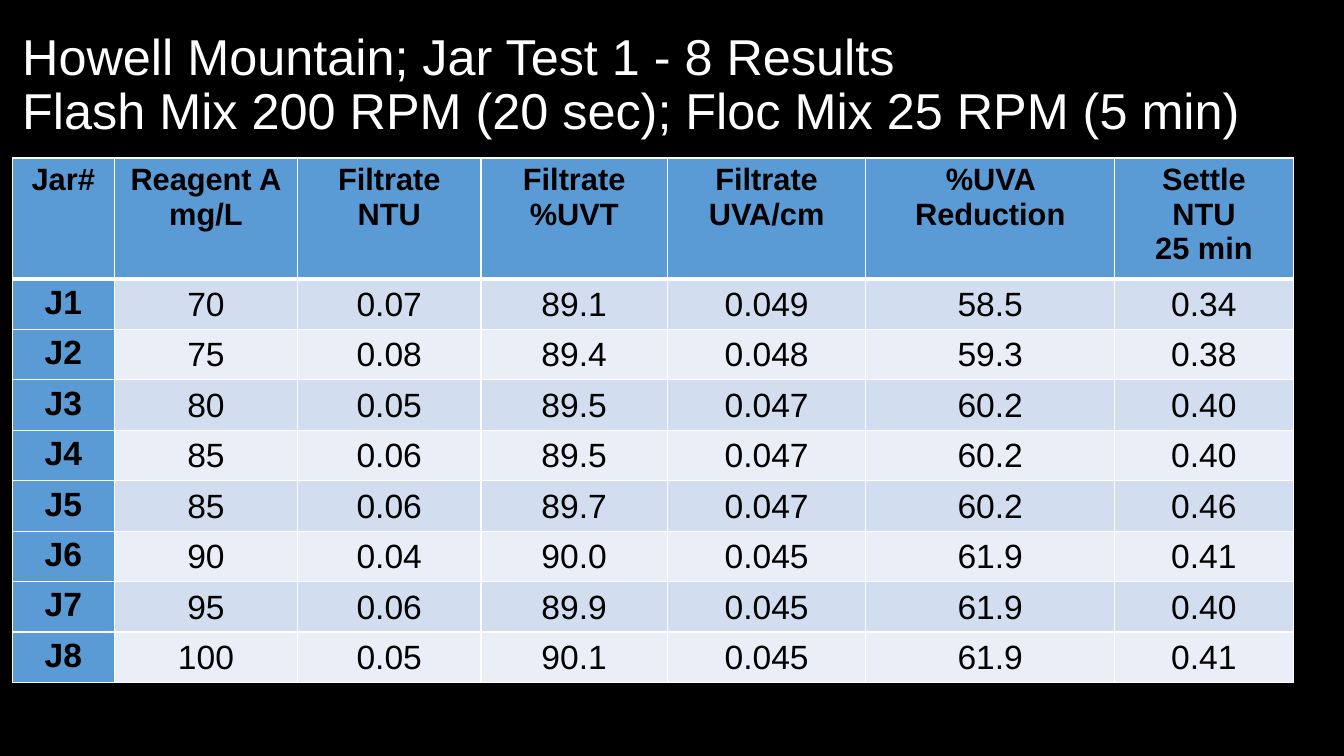
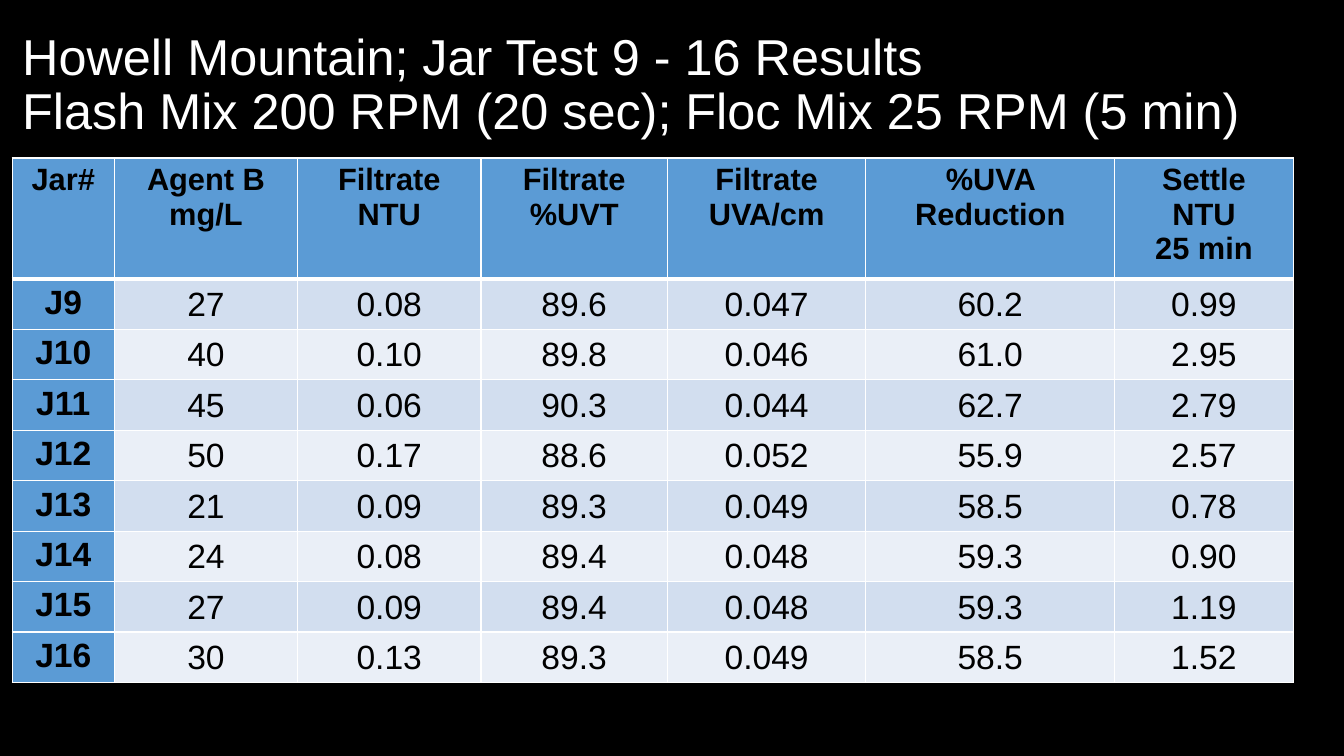
"""Builds two slides of jar test results, one table each."""
from lxml import etree
from pptx import Presentation
from pptx.dml.color import RGBColor
from pptx.enum.text import MSO_ANCHOR, PP_ALIGN
from pptx.oxml.ns import qn
from pptx.util import Cm, Pt

LEFT, CENTER = PP_ALIGN.LEFT, PP_ALIGN.CENTER
TOP, MIDDLE = MSO_ANCHOR.TOP, MSO_ANCHOR.MIDDLE

FONT = "Arial"
BLACK, WHITE, BLUE = "000000", "FFFFFF", "5B9BD5"
BANDS = ("D2DEEF", "EAEFF7")

MIXING = "Flash Mix 200 RPM (20 sec); Floc Mix 25 RPM (5 min)"
MEASURES = ["Filtrate\nNTU", "Filtrate\n%UVT", "Filtrate\nUVA/cm",
            "%UVA Reduction", "Settle\nNTU\n25 min"]
TESTS = [
    {"first_jar": 1, "coagulant": "Reagent A", "results": [
        ("70", "0.07", "89.1", "0.049", "58.5", "0.34"),
        ("75", "0.08", "89.4", "0.048", "59.3", "0.38"),
        ("80", "0.05", "89.5", "0.047", "60.2", "0.40"),
        ("85", "0.06", "89.5", "0.047", "60.2", "0.40"),
        ("85", "0.06", "89.7", "0.047", "60.2", "0.46"),
        ("90", "0.04", "90.0", "0.045", "61.9", "0.41"),
        ("95", "0.06", "89.9", "0.045", "61.9", "0.40"),
        ("100", "0.05", "90.1", "0.045", "61.9", "0.41"),
    ]},
    {"first_jar": 9, "coagulant": "Agent B", "results": [
        ("27", "0.08", "89.6", "0.047", "60.2", "0.99"),
        ("40", "0.10", "89.8", "0.046", "61.0", "2.95"),
        ("45", "0.06", "90.3", "0.044", "62.7", "2.79"),
        ("50", "0.17", "88.6", "0.052", "55.9", "2.57"),
        ("21", "0.09", "89.3", "0.049", "58.5", "0.78"),
        ("24", "0.08", "89.4", "0.048", "59.3", "0.90"),
        ("27", "0.09", "89.4", "0.048", "59.3", "1.19"),
        ("30", "0.13", "89.3", "0.049", "58.5", "1.52"),
    ]},
]

MARGIN = Cm(0.31)
TITLE_TOP, TITLE_WIDTH, TITLE_HEIGHT = Cm(0.33), Cm(33.1), Cm(3.68)
TABLE_TOP, TABLE_HEIGHT = Cm(3.98), Cm(13.2)
COLUMN_WIDTHS = [Cm(w) for w in (2.57, 4.62, 4.62, 4.7, 5, 6.27, 4.5)]
ROW_HEIGHT = Cm(1.04)
RESULT_INSET = Cm(0.03)
THIN, THICK = Pt(1), Pt(3)


def rgb(value):
    return RGBColor.from_string(value)


def write(frame, text, size, color=BLACK, bold=False, align=CENTER, spacing=None):
    frame.word_wrap = True
    for index, line in enumerate(text.split("\n")):
        paragraph = frame.add_paragraph() if index else frame.paragraphs[0]
        paragraph.alignment = align
        paragraph.line_spacing = spacing
        run = paragraph.add_run()
        run.text = line
        run.font.name = FONT
        run.font.size = Pt(size)
        run.font.bold = bold
        run.font.color.rgb = rgb(color)


def set_borders(cell, top, bottom):
    properties = cell._tc.get_or_add_tcPr()
    sides = {"lnL": THIN, "lnR": THIN, "lnT": top, "lnB": bottom}
    for position, (side, width) in enumerate(sides.items()):
        border = etree.Element(qn(f"a:{side}"), w=str(width))
        fill = etree.SubElement(border, qn("a:solidFill"))
        etree.SubElement(fill, qn("a:srgbClr"), val=WHITE)
        properties.insert(position, border)


def style_cell(cell, row, column):
    is_header, is_jar = row == 0, column == 0
    cell.fill.solid()
    cell.fill.fore_color.rgb = rgb(BLUE if is_header or is_jar else BANDS[(row - 1) % 2])
    cell.vertical_anchor = TOP if is_header or is_jar else MIDDLE
    if not (is_header or is_jar):
        cell.margin_left = cell.margin_right = cell.margin_top = RESULT_INSET
        cell.margin_bottom = 0
    set_borders(cell, THICK if row == 1 else THIN, THICK if is_header else THIN)


def add_title(slide, text):
    title = slide.shapes.add_textbox(MARGIN, TITLE_TOP, TITLE_WIDTH, TITLE_HEIGHT)
    title.text_frame.vertical_anchor = MIDDLE
    write(title.text_frame, text, 36, color=WHITE, align=LEFT, spacing=0.9)


def add_results(slide, rows):
    holder = slide.shapes.add_table(len(rows), len(COLUMN_WIDTHS), MARGIN, TABLE_TOP,
                                    sum(COLUMN_WIDTHS), TABLE_HEIGHT)
    results = holder.table
    results.horz_banding = False
    for column, width in enumerate(COLUMN_WIDTHS):
        results.columns[column].width = width
    for row, values in enumerate(rows):
        results.rows[row].height = ROW_HEIGHT
        for column, value in enumerate(values):
            cell = results.cell(row, column)
            style_cell(cell, row, column)
            write(cell.text_frame, value, 24 if row else 22, bold=row == 0 or column == 0)
    holder.height = TABLE_HEIGHT


def add_test_slide(deck, first_jar, coagulant, results):
    slide = deck.slides.add_slide(deck.slide_layouts[6])
    slide.background.fill.solid()
    slide.background.fill.fore_color.rgb = rgb(BLACK)
    last_jar = first_jar + len(results) - 1
    add_title(slide, f"Howell Mountain; Jar Test {first_jar} - {last_jar} Results\n{MIXING}")
    header = ["Jar#", f"{coagulant}\nmg/L", *MEASURES]
    jars = [(f"J{jar}", *values) for jar, values in enumerate(results, first_jar)]
    add_results(slide, [header, *jars])


def main():
    deck = Presentation()
    deck.slide_width, deck.slide_height = Cm(33.87), Cm(19.05)
    for test in TESTS:
        add_test_slide(deck, **test)
    deck.save("out.pptx")


if __name__ == "__main__":
    main()
